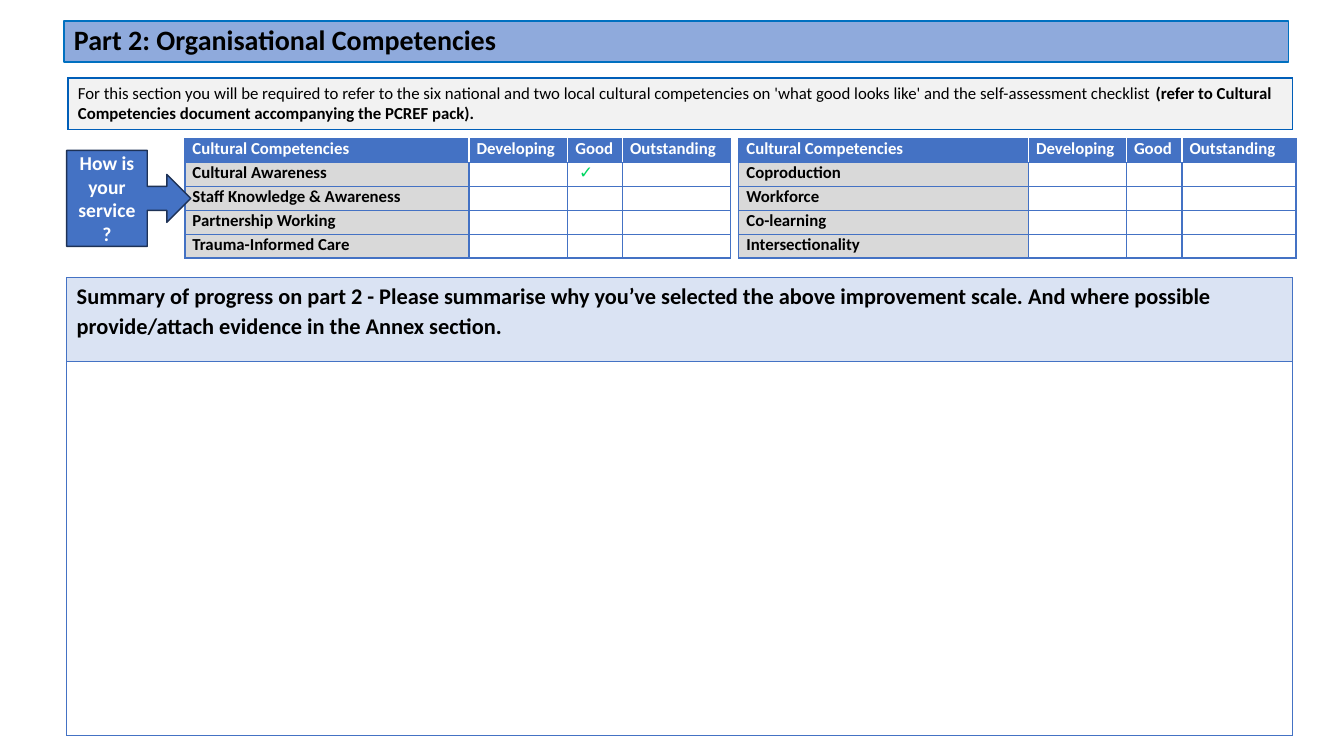
"""Builds the organisational competencies self-assessment slide."""
import pptx
import pptx.util
import pptx.dml.color
import pptx.enum.shapes
import pptx.enum.text
from lxml import etree
from pptx.oxml.ns import qn

Cm, Pt = pptx.util.Cm, pptx.util.Pt
RGB = pptx.dml.color.RGBColor.from_string
ALIGN, ANCHOR = pptx.enum.text.PP_ALIGN, pptx.enum.text.MSO_ANCHOR

THEME = {
    "font": "Calibri",
    "black": "000000", "white": "FFFFFF", "blue": "4472C4", "tick": "00D661",
    "title_fill": "8FAADC", "title_line": "0070C0", "callout_line": "1E3256",
    "intro_fill": "F2F2F2", "intro_line": "005EB8",
    "summary_fill": "DAE3F3", "label_fill": "D9D9D9",
    "title_size": 20, "spacer_size": 18, "summary_size": 16,
    "callout_size": 14, "text_size": 12,
}


def add_run(p, text, size="text_size", color="black", bold=True):
    r = p.add_run()
    r.text = text
    r.font.name = THEME["font"]
    r.font.size = Pt(THEME[size])
    r.font.bold = bold
    r.font.color.rgb = RGB(THEME[color])


def add_grid(left, top, widths, heights, line="blue", weight=1, header=False):
    table = s.shapes.add_table(len(heights), len(widths), Cm(left), Cm(top),
                               Cm(sum(widths)), Cm(sum(heights))).table
    table.first_row = header
    table.horz_banding = False
    for column, width in zip(table.columns, widths):
        column.width = Cm(width)
    for i, height in enumerate(heights):
        table.rows[i].height = Cm(height)
        for j in range(len(widths)):
            cell = table.cell(i, j)
            tcPr = cell._tc.get_or_add_tcPr()
            for side in "LRTB":
                divider = header and i == 0 and (
                    side == "L" and j > 0 or side == "R" and j < len(widths) - 1)
                ln = etree.SubElement(tcPr, qn(f"a:ln{side}"), w=str(Pt(weight)))
                fill = etree.SubElement(ln, qn("a:solidFill"))
                etree.SubElement(fill, qn("a:srgbClr"),
                                 val=THEME["white" if divider else line])
            cell.fill.background()
    return table


prs = pptx.Presentation()
prs.slide_width, prs.slide_height = Cm(33.87), Cm(19.05)
s = prs.slides.add_slide(prs.slide_layouts[5])

title = s.shapes.title
title.left, title.top, title.width, title.height = Cm(1.61), Cm(0.53), Cm(30.86), Cm(1.03)
title.fill.solid()
title.fill.fore_color.rgb = RGB(THEME["title_fill"])
title.line.color.rgb = RGB(THEME["title_line"])
title.line.width = Pt(1.25)
tf = title.text_frame
tf.auto_size = pptx.enum.text.MSO_AUTO_SIZE.NONE
tf.vertical_anchor = ANCHOR.MIDDLE
p = tf.paragraphs[0]
p.alignment = ALIGN.LEFT
p.line_spacing = 0.9
add_run(p, "Part 2: Organisational Competencies", "title_size")

summary = add_grid(1.68, 7, [30.89], [2.11, 9.43]).cell(0, 0)
summary.fill.solid()
summary.fill.fore_color.rgb = RGB(THEME["summary_fill"])
p = summary.text_frame.paragraphs[0]
add_run(p, "Summary of progress on part 2 - Please summarise why you’ve selected the above "
        "improvement scale. And where possible provide/attach evidence in the Annex section.",
        "summary_size")
add_run(p, " ", "spacer_size")

HEADINGS = ["Cultural Competencies", "Developing", "Good", "Outstanding"]
COMPETENCIES = [
    (4.66, [7.16, 2.49, 1.38, 2.72],
     [["Cultural Awareness", "", " ✓", ""], ["Staff Knowledge & Awareness", "", "", ""],
      ["Partnership Working", "", "", ""], ["Trauma-Informed Care", "", "", ""]]),
    (18.62, [7.3, 2.47, 1.4, 2.87],
     [["Coproduction", "", "", ""], ["Workforce", "", "", ""],
      ["Co-learning", "", "", ""], ["Intersectionality", "", "", ""]]),
]
for left, widths, ratings in COMPETENCIES:
    table = add_grid(left, 3.5, widths, [0.6] * 5, header=True)
    for i, row in enumerate([HEADINGS] + ratings):
        for j, text in enumerate(row):
            cell = table.cell(i, j)
            cell.margin_left = cell.margin_right = Cm(0.19)
            cell.margin_top = cell.margin_bottom = 0
            if i == 0 or j == 0:
                cell.fill.solid()
                cell.fill.fore_color.rgb = RGB(THEME["blue" if i == 0 else "label_fill"])
            p = cell.text_frame.paragraphs[0]
            p.alignment = ALIGN.LEFT if i == j == 0 else ALIGN.JUSTIFY
            if text:
                color = "white" if i == 0 else "black" if j == 0 else "tick"
                add_run(p, text, color=color, bold=color != "tick")
            else:
                etree.SubElement(p._p, qn("a:endParaRPr"), sz=str(THEME["text_size"] * 100))

sp = s.shapes.add_shape(pptx.enum.shapes.MSO_SHAPE.RIGHT_ARROW_CALLOUT,
                        Cm(1.68), Cm(3.79), Cm(3.13), Cm(2.42))
sp.shadow.inherit = False
sp.fill.solid()
sp.fill.fore_color.rgb = RGB(THEME["blue"])
sp.line.color.rgb = RGB(THEME["callout_line"])
sp.line.width = Pt(1)
tf = sp.text_frame
tf.word_wrap = True
tf.vertical_anchor = ANCHOR.MIDDLE
p = tf.paragraphs[0]
p.alignment = ALIGN.CENTER
add_run(p, "How is your service?", "callout_size", "white")

intro = add_grid(1.71, 1.97, [30.86], [1.27], "intro_line", 1.19).cell(0, 0)
intro.fill.solid()
intro.fill.fore_color.rgb = RGB(THEME["intro_fill"])
intro.vertical_anchor = ANCHOR.MIDDLE
p = intro.text_frame.paragraphs[0]
add_run(p, "For this section you will be required to refer to the six national and two local "
        "cultural competencies on 'what good looks like' and the self-assessment checklist ",
        bold=False)
add_run(p, "(refer to Cultural Competencies document accompanying the PCREF pack).")

prs.save("out.pptx")
